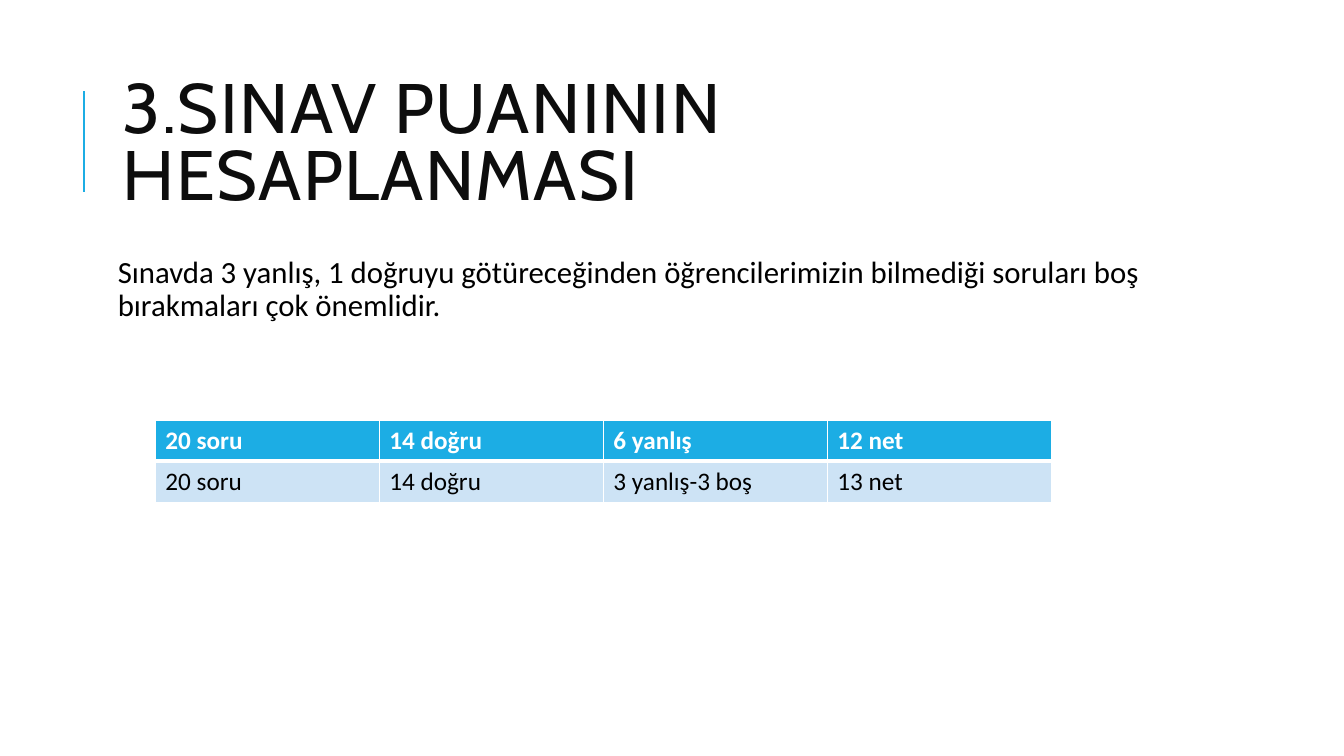
from lxml.etree import SubElement
from pptx import Presentation
from pptx.dml.color import RGBColor
from pptx.enum.shapes import MSO_CONNECTOR as CONN
from pptx.enum.text import MSO_ANCHOR as ANCHOR
from pptx.oxml.ns import qn
from pptx.util import Pt


def rgb(value):
    return RGBColor.from_string(value)


class Deck:
    accent, band, ink, black, white = "1CADE4", "CDE3F5", "0D0D0D", "000000", "FFFFFF"
    heading, body = "Cabin", "Calibri"

    def __init__(self, prs):
        self.s = prs.slides.add_slide(prs.slide_layouts[6])

    def style(self, p, size, color, name, bold=False):
        f = p.font
        f.size, f.name, f.bold = Pt(size), name, bold
        f.color.rgb = rgb(color)

    def line(self, x1, y1, x2, y2, width):
        c = self.s.shapes.add_connector(CONN.STRAIGHT, Pt(x1), Pt(y1), Pt(x2), Pt(y2))
        c.line.color.rgb = rgb(self.accent)
        c.line.width = Pt(width)
        SubElement(c._element.spPr, qn("a:effectLst"))

    def text(self, x, y, w, h, text, size, color, name, spacing,
             anchor=ANCHOR.TOP, inset=7.2, before=0, after=0, tracking=0):
        tf = self.s.shapes.add_textbox(Pt(x), Pt(y), Pt(w), Pt(h)).text_frame
        tf.word_wrap = True
        tf.vertical_anchor = anchor
        tf.margin_left = tf.margin_right = Pt(inset)
        tf.margin_top = tf.margin_bottom = Pt(3.6)
        p = tf.paragraphs[0]
        r = p.add_run()
        r.text = text
        p.line_spacing = spacing
        p.space_before, p.space_after = Pt(before), Pt(after)
        self.style(p, size, color, name)
        if tracking:
            r.font._element.set("spc", str(tracking * 100))

    def border(self, cell, side, width):
        tc_pr = cell._tc.get_or_add_tcPr()
        ln = SubElement(tc_pr, qn(f"a:ln{side}"), w=str(Pt(width)))
        fill = SubElement(ln, qn("a:solidFill"))
        SubElement(fill, qn("a:srgbClr"), val=self.white)

    def table(self, x, y, col_w, row_h, rows):
        n, m = len(rows), len(rows[0])
        t = self.s.shapes.add_table(n, m, Pt(x), Pt(y), Pt(col_w * m), Pt(row_h * n)).table
        for i, row in enumerate(rows):
            head = i == 0
            t.rows[i].height = Pt(row_h)
            for j, value in enumerate(row):
                cell = t.cell(i, j)
                cell.text = value
                self.style(cell.text_frame.paragraphs[0], 18,
                           self.white if head else self.black, self.body, head)
                for side, width in zip("LRTB", (1, 1, 1, 3) if head else (1, 1, 3, 1)):
                    self.border(cell, side, width)
                cell.fill.solid()
                cell.fill.fore_color.rgb = rgb(self.accent if head else self.band)
        for col in t.columns:
            col.width = Pt(col_w)


def main():
    prs = Presentation()
    prs.slide_width, prs.slide_height = Pt(960), Pt(540)
    d = Deck(prs)
    d.line(60, 137, 60, 65, 1.5)
    d.text(80.6, 46, 765.4, 118, "3.SINAV PUANININ HESAPLANMASI", 50, d.ink, d.heading,
           0.8, anchor=ANCHOR.MIDDLE, tracking=1)
    d.text(80.6, 180, 765.4, 316.8,
           "Sınavda 3 yanlış, 1 doğruyu götüreceğinden öğrencilerimizin bilmediği "
           "soruları boş bırakmaları çok önemlidir.",
           22, d.black, d.body, 0.9, inset=3.6, before=12, after=2)
    d.table(111, 300.3, 160, 29.2, [
        ["20 soru", "14 doğru", "6 yanlış", "12 net"],
        ["20 soru", "14 doğru", "3 yanlış-3 boş", "13 net"],
    ])
    prs.save("out.pptx")


if __name__ == "__main__":
    main()
